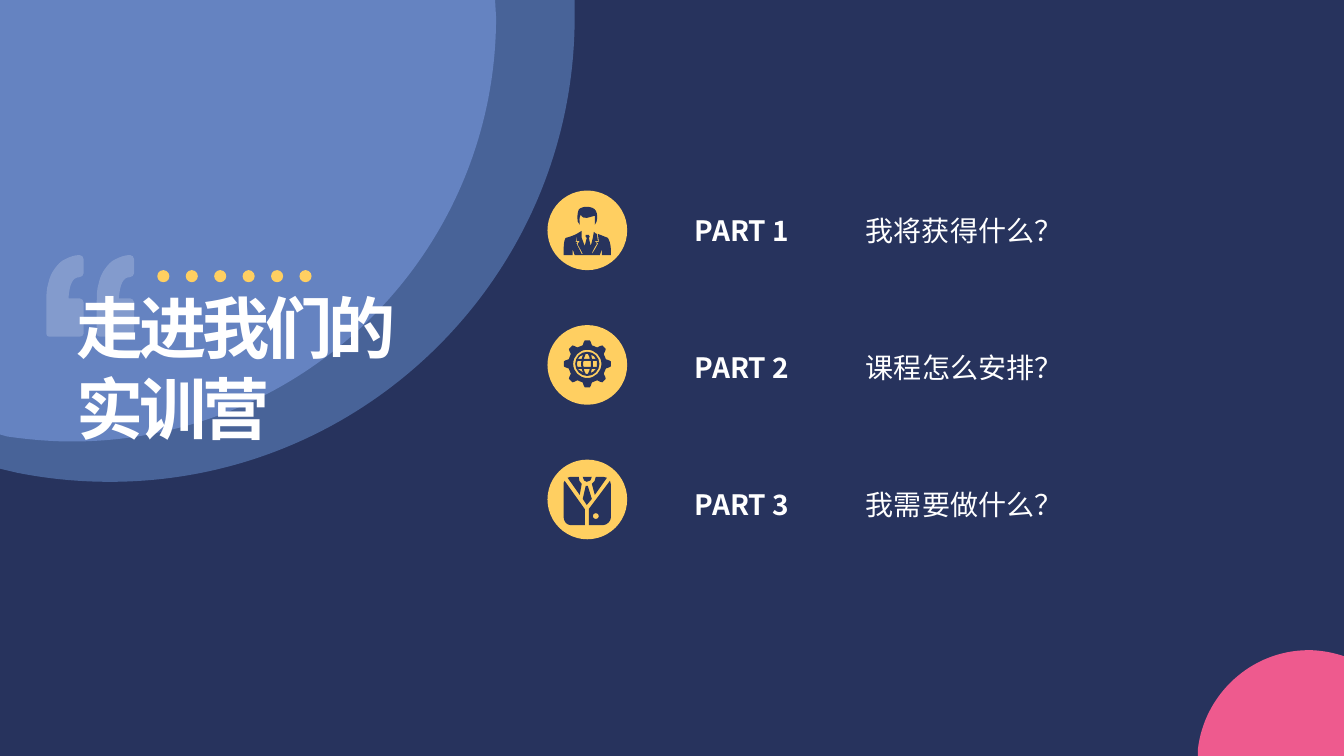
"""Build the agenda slide on a grid of 1333 columns by 750 rows, each 0.01 inch."""
import math
from dataclasses import dataclass
from typing import NamedTuple

import pptx
import pptx.dml.color
import pptx.enum.shapes
import pptx.enum.text
import pptx.oxml
import pptx.oxml.ns
import pptx.util

RGBColor = pptx.dml.color.RGBColor
NAVY = RGBColor(0x27, 0x33, 0x5D)
STEEL = RGBColor(0x48, 0x63, 0x98)
BLUE = RGBColor(0x65, 0x83, 0xC1)
PINK = RGBColor(0xEE, 0x5A, 0x8E)
YELLOW = RGBColor(0xFF, 0xCF, 0x61)
WHITE = RGBColor(0xFF, 0xFF, 0xFF)

COLS, ROWS = 1333, 750
CELL = pptx.util.Inches(0.01)
FONT = "Noto Sans CJK SC"
LEFT = pptx.enum.text.PP_ALIGN.LEFT
CENTER = pptx.enum.text.PP_ALIGN.CENTER

OUTER_DISC = "M 0 0 L 570 0 L 570 17 C 570 271 364 478 109 478 C 78 478 47 475 17 469 L 0 465"
INNER_DISC = "M 0 0 L 491 0 L 492 17 C 492 249 304 438 71 438 C 50 438 28 436 7 433 L 0 431"
CORNER_DISC = """
M 1298 645 C 1309 645 1320 647 1330 650 L 1333 651 L 1333 750 L 1188 750
L 1188 744 C 1194 689 1241 645 1298 645
"""
PERSON = """
M 16 19 C 16 15 15 13 17 9 C 20 15 26 11 31 10 C 31 13 31 15 31 19
C 34 16 34 8 32 5 C 29 0 18 0 15 4 C 14 6 12 16 16 19
M 2 32 C 6 31 9 30 13 28 L 12 36 L 14 36 L 13 37 L 13 38 C 13 38 16 44 18 48
L 19 48 C 18 45 14 39 14 38 L 16 35 L 13 35 L 13 28 C 14 27 17 26 18 25
L 18 32 L 21 40 L 23 32 L 22 31 L 22 29 L 25 29 L 26 31 L 25 32 L 27 40
L 29 32 L 30 26 C 31 27 32 28 33 28 L 34 35 L 31 35 L 33 38
C 32 39 30 43 28 47 L 28 48 C 31 44 34 38 34 38 L 34 37 L 32 36 L 35 36
L 34 28 L 44 32 C 47 37 47 43 47 49 L 38 49 L 38 43 L 36 49 L 11 49
L 9 43 L 9 49 L 0 49 C 0 41 0 35 2 32
"""
GLOBE_WINDOWS = """
M 20 29 C 20 30 21 32 22 34 L 24 34 C 25 32 26 30 26 29
M 14 29 C 16 31 17 32 20 33 C 19 32 18 30 18 29
M 28 29 C 28 30 27 32 27 33 C 29 32 31 31 32 29
M 29 21 C 29 23 29 25 29 27 L 33 27 C 33 26 33 22 33 21
M 20 21 C 19 22 19 26 20 27 L 27 27 C 27 26 27 22 27 21
M 14 21 C 13 22 13 26 14 27 L 18 27 C 17 26 17 22 18 21
M 27 15 C 28 16 28 18 28 19 L 32 19 C 31 17 29 15 27 15
M 20 15 C 17 15 16 17 14 19 L 18 19 C 18 17 19 16 20 15
M 22 14 C 21 16 21 17 20 19 L 26 19 C 26 17 25 16 24 14
"""
SUIT = """
M 32 36 C 28 36 28 42 32 42 C 36 42 36 36 32 36
M 22 9 L 24 9 L 28 22 L 23 28 L 19 22
M 46 4 C 46 5 47 7 47 8 L 47 40 C 47 44 43 48 39 48 L 25 48 L 25 32
M 1 4 L 21 32 L 21 48 L 7 48 C 3 48 0 44 0 40 L 0 8 C 0 7 0 5 1 4
M 19 0 L 28 0 C 28 3 26 5 23 5 C 21 5 19 3 19 0
M 32 0 L 39 0 C 40 0 42 1 43 1 L 31 18 L 28 7 C 30 6 32 3 32 0
M 7 0 L 15 0 C 15 3 16 6 18 7 L 16 18 L 4 1 C 5 1 6 0 7 0
"""
QUOTE_MARK = """
M 37 4 L 37 18 C 37 20 35 22 33 22 C 26 22 23 29 22 43 L 33 43
C 35 43 37 45 37 47 L 37 78 C 37 80 35 81 33 81 L 3 81 C 1 81 0 80 0 78
L 0 47 C 0 40 0 34 2 28 C 3 23 5 18 8 14 C 11 10 14 6 19 4
C 23 2 28 0 33 0 C 35 0 37 2 37 4
"""
TOOTH = ((-14, 19), (-9, 22), (-6, 23.5), (6, 23.5), (9, 22), (14, 19))


class Segment(NamedTuple):
    command: str
    points: list[tuple[int, int]]


@dataclass(frozen=True)
class Part:
    label: str
    question: str
    width: int
    icon: str
    icon_row: int


def trace(outline: str, col: float = 0, row: float = 0) -> list[Segment]:
    """Read move, line and curve commands, placed on the grid."""
    tokens = iter(outline.split())
    segments = []
    for command in tokens:
        points = [(round((col + float(next(tokens))) * CELL), round((row + float(next(tokens))) * CELL))
                  for _ in range(3 if command == "C" else 1)]
        segments.append(Segment(command, points))
    return segments


def ring(x: float, y: float, r: float) -> str:
    """Return the outline of a circle."""
    k = 0.55 * r
    return (f"M {x + r} {y} C {x + r} {y + k} {x + k} {y + r} {x} {y + r} "
            f"C {x - k} {y + r} {x - r} {y + k} {x - r} {y} "
            f"C {x - r} {y - k} {x - k} {y - r} {x} {y - r} "
            f"C {x + k} {y - r} {x + r} {y - k} {x + r} {y} ")


def gear() -> str:
    """Return the outline of an eight-toothed gear around a globe."""
    x, y = 23.5, 24
    rim = [(r, math.radians(45 * i + a)) for i in range(8) for a, r in TOOTH]
    teeth = " L ".join(f"{x + r * math.cos(a):.2f} {y + r * math.sin(a):.2f}" for r, a in rim)
    return f"M {teeth} {ring(x, y, 14)}{ring(x, y, 12)}{GLOBE_WINDOWS}"


def paint(sp, color: RGBColor) -> None:
    """Give a shape a plain fill without line or shadow."""
    sp.shadow.inherit = False
    sp.fill.solid()
    sp.fill.fore_color.rgb = color
    sp.line.fill.background()


def add_outline(s, segments: list[Segment], color: RGBColor):
    """Draw segments as one freeform, bending its curves."""
    builder = s.shapes.build_freeform(*segments[0].points[0], scale=1)
    for i, segment in enumerate(segments):
        if segment.command != "M":
            last = i + 1 == len(segments) or segments[i + 1].command == "M"
            builder.add_line_segments(segment.points, close=last)
        elif i:
            builder.move_to(*segment.points[0])
    sp = builder.convert_to_shape()
    lines = iter(list(sp._element.iter(pptx.oxml.ns.qn("a:lnTo"))))
    for segment in segments:
        if segment.command == "L":
            next(lines)
        elif segment.command == "C":
            curve = pptx.oxml.parse_xml(f'<a:cubicBezTo {pptx.oxml.ns.nsdecls("a")}/>')
            steps = [next(lines) for _ in range(3)]
            steps[0].addprevious(curve)
            for step in steps:
                curve.append(step[0])
                step.getparent().remove(step)
    paint(sp, color)
    return sp


def add_dot(s, x: float, y: float, size: float) -> None:
    """Draw a yellow ellipse from its top left corner."""
    box = [round(v * CELL) for v in (x, y, size, size)]
    paint(s.shapes.add_shape(pptx.enum.shapes.MSO_SHAPE.OVAL, *box), YELLOW)


def add_text(s, box: tuple[int, int, int, int], text: str, size: int, bold: bool = False, align=LEFT):
    """Add a white wrapped text box and return it."""
    sp = s.shapes.add_textbox(*(v * CELL for v in box))
    tf = sp.text_frame
    tf.word_wrap = True
    tf.auto_size = pptx.enum.text.MSO_AUTO_SIZE.SHAPE_TO_FIT_TEXT
    p = tf.paragraphs[0]
    p.alignment = align
    r = p.add_run()
    r.text = text
    r.font.size, r.font.bold, r.font.name = pptx.util.Pt(size), bold, FONT
    r.font.color.rgb = WHITE
    ea = pptx.oxml.parse_xml(f'<a:ea {pptx.oxml.ns.nsdecls("a")} typeface="{FONT}"/>')
    r.font._element.find(pptx.oxml.ns.qn("a:latin")).addnext(ea)
    return sp


def main() -> None:
    """Compose and save the slide."""
    prs = pptx.Presentation()
    prs.slide_width, prs.slide_height = COLS * CELL, ROWS * CELL
    s = prs.slides.add_slide(prs.slide_layouts[6])
    s.background.fill.solid()
    s.background.fill.fore_color.rgb = NAVY
    for disc, color in ((OUTER_DISC, STEEL), (INNER_DISC, BLUE), (CORNER_DISC, PINK)):
        add_outline(s, trace(disc), color)

    parts = (Part("PART 1", "我将获得什么？", 340, PERSON, 204),
             Part("PART 2", "课程怎么安排？", 405, gear(), 337),
             Part("PART 3", "我需要做什么？", 449, SUIT, 473))
    for i, part in enumerate(parts):
        add_dot(s, 543, 189 + 133.5 * i, 79)
        add_outline(s, trace(part.icon, 559, part.icon_row), NAVY)
        row = 207 + 136 * i
        add_text(s, (849, row, part.width, 44), part.question, 20)
        add_text(s, (664, row, 144, 44), part.label, 20, True, CENTER)

    quote = add_outline(s, trace(QUOTE_MARK, 46, 253) + trace(QUOTE_MARK, 96, 253), WHITE)
    alpha = pptx.oxml.parse_xml(f'<a:alpha {pptx.oxml.ns.nsdecls("a")} val="20000"/>')
    quote._element.spPr.find(".//" + pptx.oxml.ns.qn("a:srgbClr")).append(alpha)
    for i in range(6):
        add_dot(s, 156 + 28.2 * i, 268, 12)

    title = add_text(s, (76, 284, 365, 162), "走进我们的实训营", 48, True)
    tf = title.text_frame
    tf.margin_left = tf.margin_top = tf.margin_right = tf.margin_bottom = 0
    tf.paragraphs[0].runs[0].font._element.set("spc", "-300")
    prs.save("out.pptx")


if __name__ == "__main__":
    main()
